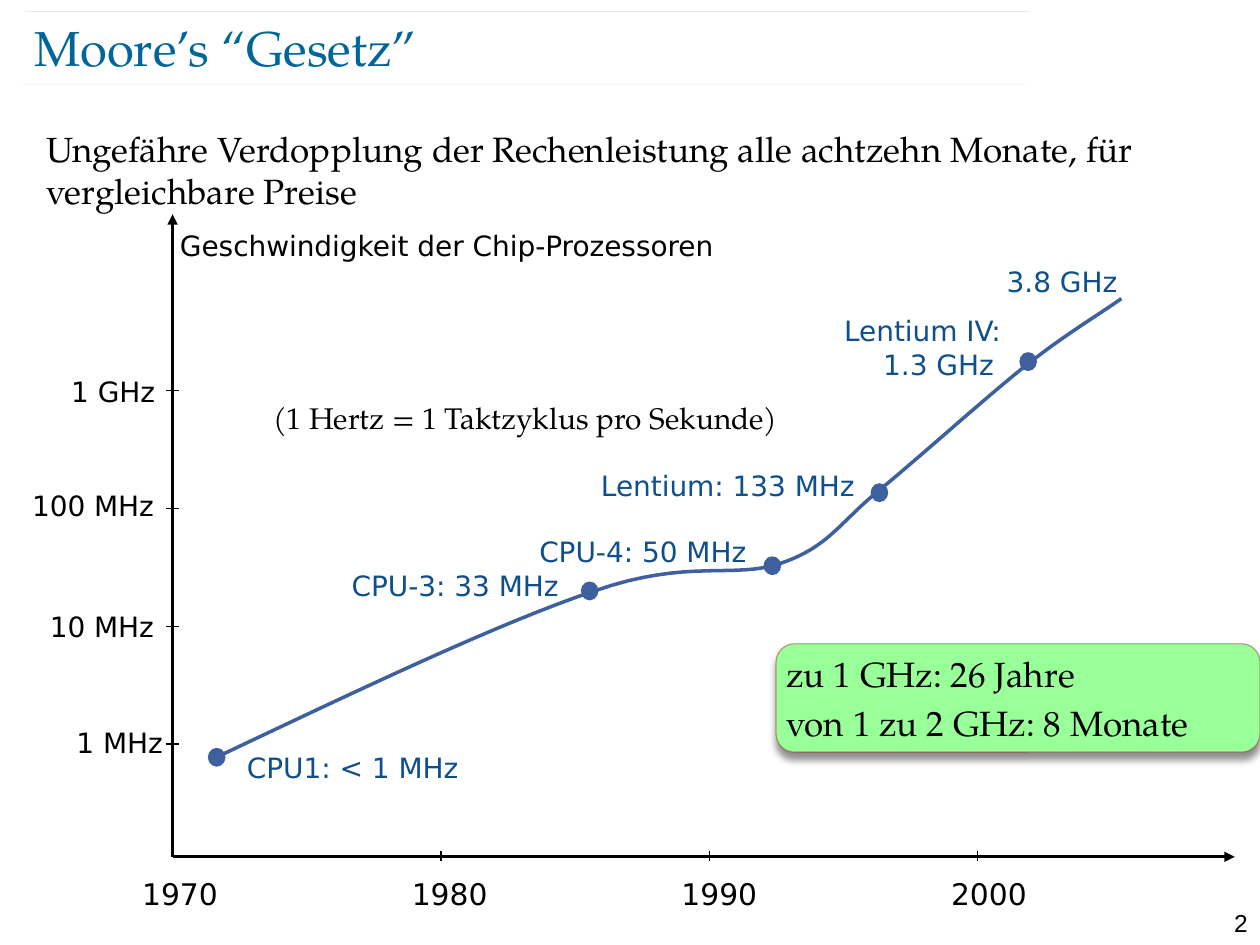
from lxml import etree
from pptx import Presentation
from pptx.dml.color import RGBColor
from pptx.enum.shapes import MSO_CONNECTOR as CONN, MSO_SHAPE as SHAPE
from pptx.enum.text import MSO_ANCHOR as ANCHOR, PP_ALIGN as ALIGN
from pptx.oxml.ns import qn
from pptx.util import Inches, Pt

COLS, ROWS = 100, 75
COLORS = {"title": "006699", "text": "000000", "label": "0F4F8C", "curve": "3E609E",
          "box": "99FF99", "edge": "990000"}
SERIF, SANS, ARIAL = "TeX Gyre Pagella", "DejaVu Sans", "Arial"
HANGING = (8.1, -3.1)


def rgb(name):
    return RGBColor.from_string(COLORS[name])


def add_alpha(color, percent):
    etree.SubElement(color, qn("a:alpha"), val=str(percent * 1000))


def bezier(start, segments, steps=16):
    """Points along joined cubic curves, each given as two controls and an end."""
    points = [start]
    for a, b, end in segments:
        for i in range(1, steps + 1):
            t = i / steps
            u = 1 - t
            points.append(tuple(u**3 * p0 + 3 * u * u * t * p1 + 3 * u * t * t * p2 + t**3 * p3
                                for p0, p1, p2, p3 in zip(start, a, b, end)))
        start = end
    return points


class Deck:
    """Style and current slide; lengths are in grid columns and rows."""

    def __init__(self):
        self.prs = Presentation()
        self.prs.slide_width, self.prs.slide_height = Inches(10), Inches(7.5)
        self.col = self.prs.slide_width / COLS
        self.row = self.prs.slide_height / ROWS
        self.s = self.prs.slides.add_slide(self.prs.slide_layouts[6])

    def at(self, x, y):
        return round(x * self.col), round(y * self.row)

    def fill_text(self, sp, paragraphs, size, font=SANS, color="text", align=ALIGN.LEFT,
                  anchor=ANCHOR.TOP, inset=None, indent=None, spacing=None, before=0):
        tf = sp.text_frame
        tf.word_wrap, tf.vertical_anchor = True, anchor
        if inset is not None:
            tf.margin_left = tf.margin_right = tf.margin_top = tf.margin_bottom = Inches(inset)
        for i, text in enumerate(paragraphs):
            p = tf.add_paragraph() if i else tf.paragraphs[0]
            p.text, p.alignment = text, align
            if i:
                p.space_before = Pt(before)
            if spacing:
                p.line_spacing = spacing
            if indent:
                margin, first = self.at(*indent)[0], self.at(indent[1], 0)[0]
                p._p.get_or_add_pPr().set("marL", str(margin))
                p._p.get_or_add_pPr().set("indent", str(first))
            for r in p.runs:
                r.font.size, r.font.name = Pt(size), font
                r.font.color.rgb = rgb(color)

    def text(self, x, y, w, h, text, size, **style):
        sp = self.s.shapes.add_textbox(*self.at(x, y), *self.at(w, h))
        self.fill_text(sp, [text], size, **style)

    def line(self, x1, y1, x2, y2, width, color="text", arrow=False, alpha=None):
        c = self.s.shapes.add_connector(CONN.STRAIGHT, *self.at(x1, y1), *self.at(x2, y2))
        c.line.width, c.line.color.rgb = Pt(width), rgb(color)
        ln = c.line._get_or_add_ln()
        if alpha:
            add_alpha(next(ln.iter(qn("a:srgbClr"))), alpha)
        if arrow:
            etree.SubElement(ln, qn("a:tailEnd"), type="triangle")
        etree.SubElement(c._element.spPr, qn("a:effectLst"))

    def dot(self, x, y, w=1.4, h=1.5):
        sp = self.s.shapes.add_shape(SHAPE.OVAL, *self.at(x - w / 2, y - h / 2), *self.at(w, h))
        sp.shadow.inherit = False
        sp.fill.solid()
        sp.fill.fore_color.rgb = rgb("curve")
        sp.line.fill.background()

    def curve(self, start, segments, width):
        first, *rest = [self.at(*p) for p in bezier(start, segments)]
        builder = self.s.shapes.build_freeform(*first)
        builder.add_line_segments(rest, close=False)
        sp = builder.convert_to_shape()
        sp.shadow.inherit = False
        sp.fill.background()
        sp.line.width, sp.line.color.rgb = Pt(width), rgb("curve")

    def callout(self, x, y, w, h, paragraphs):
        sp = self.s.shapes.add_shape(SHAPE.ROUNDED_RECTANGLE, *self.at(x, y), *self.at(w, h))
        sp.fill.solid()
        sp.fill.fore_color.rgb = rgb("box")
        sp.line.width, sp.line.color.rgb = Pt(0.75), rgb("edge")
        add_alpha(next(sp.line._get_or_add_ln().iter(qn("a:srgbClr"))), 34)
        sp.shadow.inherit = False
        shadow = etree.SubElement(sp._element.spPr.find(qn("a:effectLst")), qn("a:outerShdw"),
                                  blurRad=str(Pt(4)), dist=str(Pt(4)), dir="5400000",
                                  rotWithShape="0")
        add_alpha(etree.SubElement(shadow, qn("a:srgbClr"), val=COLORS["text"]), 43)
        self.fill_text(sp, paragraphs, 20, font=SERIF, anchor=ANCHOR.MIDDLE, inset=0.04, before=4)


def add_frame(deck):
    for x, y in ((1.8, 6.7), (2, 0.9)):
        deck.line(x, y, x + 79.7, y, 0.1, color="title", alpha=35)
    deck.text(94.5, 71.6, 5.5, 2.4, "2", 14, font=ARIAL, align=ALIGN.RIGHT)
    deck.text(2.7, 1.3, 86.9, 4.8, "Moore’s “Gesetz”", 28, font=SERIF, color="title",
              anchor=ANCHOR.MIDDLE, inset=0)
    deck.text(2.7, 9.6, 94, 61.7, "Ungefähre Verdopplung der Rechenleistung alle achtzehn "
              "Monate, für vergleichbare Preise", 20, font=SERIF)


def add_axes(deck):
    left, bottom = 13.7, 68
    deck.line(left, bottom, left, 17, 1.5, arrow=True)
    deck.line(left, bottom, 98, bottom, 1.5, arrow=True)
    for i, year in enumerate(("1970", "1980", "1990", "2000")):
        x = left + 21.3 * i
        if i:
            deck.line(x, bottom - 0.5, x, bottom + 0.3, 0.75)
        deck.text(5.3 + 21.4 * i, 69, 17.3, 3.8, year, 17, indent=HANGING)
    speeds = (("1 GHz", 13.3, 29.2), ("100 MHz", 13.2, 38.3),
              ("10 MHz", 13.2, 47.9), ("1 MHz", 13.9, 57.1))
    for i, (speed, right, top) in enumerate(speeds):
        y = 31 + 9.35 * i
        deck.line(left - 0.5, y, left + 0.5, y, 0.75)
        deck.text(0, top, right, 3.7, speed, 16, align=ALIGN.RIGHT)


def add_curve(deck):
    deck.curve((17.4, 60), [
        ((28.6, 54.7), (39.7, 49.4), (47.2, 46.9)),
        ((54.6, 44.3), (58.3, 46), (62, 44.7)),
        ((65.8, 43.4), (66.6, 41.5), (69.8, 38.9)),
        ((73.1, 36.2), (78.5, 31.3), (81.7, 28.8)),
        ((84.9, 26.3), (87.5, 24.8), (89, 23.7))], 2)
    for x, y in ((17.2, 60.1), (46.8, 46.9), (61.3, 44.9), (69.8, 39.1), (81.6, 28.7)):
        deck.dot(x, y)
    labels = ((14.6, 59.6, 21.9, "CPU1: < 1 MHz"), (22.9, 45.1, 22.1, "CPU-3: 33 MHz"),
              (37.8, 42.4, 22.1, "CPU-4: 50 MHz"), (42.7, 37.2, 25.6, "Lentium: 133 MHz"),
              (62, 24.9, 18.4, "Lentium IV:\v1.3 GHz"))
    for x, y, w, label in labels:
        deck.text(x, y, w, 2.7, label, 16, color="label", inset=0, indent=HANGING)
    deck.text(79.9, 21, 9, 2.7, "3.8 GHz", 16, color="label", inset=0)


def main():
    deck = Deck()
    add_frame(deck)
    add_axes(deck)
    add_curve(deck)
    deck.text(8.3, 18.6, 53.8, 2.6, "Geschwindigkeit der Chip-Prozessoren", 16,
              indent=HANGING, spacing=0.6)
    deck.text(20.7, 31.2, 44.8, 3.9, "(1 Hertz = 1 Taktzyklus pro Sekunde)", 17, font=SERIF)
    deck.callout(61.6, 51.1, 38.4, 8.6, ["zu 1 GHz: 26 Jahre", "von 1 zu 2 GHz: 8 Monate"])
    deck.prs.save("out.pptx")


if __name__ == "__main__":
    main()
